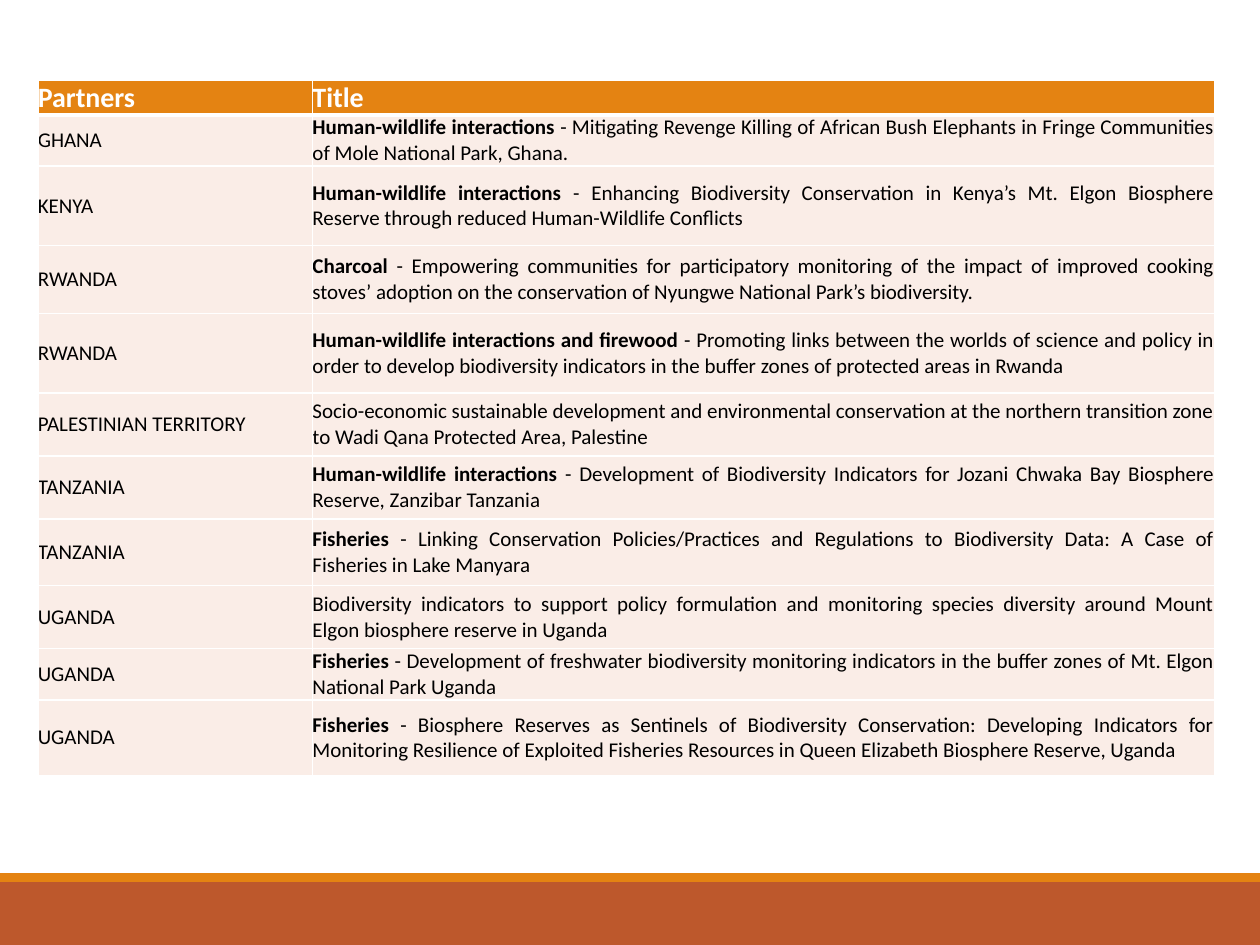
from lxml.etree import SubElement
from pptx import Presentation
from pptx.dml.color import RGBColor
from pptx.enum.shapes import MSO_SHAPE
from pptx.enum.text import MSO_ANCHOR, PP_ALIGN
from pptx.oxml.ns import qn
from pptx.util import Inches, Pt

COLORS = {
    "rust": "BD582C",
    "orange": "E48312",
    "cream": "FAEDE7",
    "white": "FFFFFF",
    "black": "000000",
}

HEADINGS = ("Partners", "Title")
WILDLIFE = "Human-wildlife interactions"

# Partner, bold topic, project title, row height
PROJECTS = [
    ("GHANA", WILDLIFE, "Mitigating Revenge Killing of African Bush Elephants in Fringe "
     "Communities of Mole National Park, Ghana.", 0.36),
    ("KENYA", WILDLIFE, "Enhancing Biodiversity Conservation in Kenya’s Mt. Elgon Biosphere "
     "Reserve through reduced Human-Wildlife Conflicts", 0.63),
    ("RWANDA", "Charcoal", "Empowering communities for participatory monitoring of the impact of "
     "improved cooking stoves’ adoption on the conservation of Nyungwe National Park’s "
     "biodiversity.", 0.54),
    ("RWANDA", WILDLIFE + " and firewood", "Promoting links between the worlds of science and "
     "policy in order to develop biodiversity indicators in the buffer zones of protected areas "
     "in Rwanda", 0.63),
    ("PALESTINIAN TERRITORY", "", "Socio-economic sustainable development and environmental "
     "conservation at the northern transition zone to Wadi Qana Protected Area, Palestine", 0.5),
    ("TANZANIA", WILDLIFE, "Development of Biodiversity Indicators for Jozani Chwaka Bay "
     "Biosphere Reserve, Zanzibar Tanzania", 0.5),
    ("TANZANIA", "Fisheries", "Linking Conservation Policies/Practices and Regulations to "
     "Biodiversity Data: A Case of Fisheries in Lake Manyara", 0.53),
    ("UGANDA", "", "Biodiversity indicators to support policy formulation and monitoring species "
     "diversity around Mount Elgon biosphere reserve in Uganda", 0.5),
    ("UGANDA", "Fisheries", "Development of freshwater biodiversity monitoring indicators in the "
     "buffer zones of Mt. Elgon National Park Uganda", 0.38),
    ("UGANDA", "Fisheries", "Biosphere Reserves as Sentinels of Biodiversity Conservation: "
     "Developing Indicators for Monitoring Resilience of Exploited Fisheries Resources in Queen "
     "Elizabeth Biosphere Reserve, Uganda", 0.6),
]

HEADING_HEIGHT = 0.13
COLUMN_WIDTHS = (2.18, 7.16)
TABLE_LEFT, TABLE_TOP = 0.3, 0.64
SLIDE_WIDTH, SLIDE_HEIGHT = 10, 7.5

# Top, height, colour
FOOTER_BANDS = [(7, 0.5, "rust"), (6.93, 0.07, "orange")]


def color(name):
    return RGBColor.from_string(COLORS[name])


def add_footer_band(slide, top, height, fill):
    band = slide.shapes.add_shape(MSO_SHAPE.RECTANGLE, 0, Inches(top),
                                  Inches(SLIDE_WIDTH), Inches(height))
    band.shadow.inherit = False
    band.fill.solid()
    band.fill.fore_color.rgb = color(fill)
    band.line.fill.background()


def set_borders(cell, top=1, bottom=1):
    """Draw white borders, widths in points; call before filling the cell."""
    properties = cell._tc.get_or_add_tcPr()
    for side, width in (("L", 1), ("R", 1), ("T", top), ("B", bottom)):
        border = SubElement(properties, qn(f"a:ln{side}"), w=str(Pt(width)))
        fill = SubElement(border, qn("a:solidFill"))
        SubElement(fill, qn("a:srgbClr"), val=COLORS["white"])


def write_cell(cell, runs, size, text_color, fill):
    """Fill a cell with runs given as (text, bold)."""
    cell.margin_left = cell.margin_right = cell.margin_top = cell.margin_bottom = 0
    cell.vertical_anchor = MSO_ANCHOR.MIDDLE
    cell.fill.solid()
    cell.fill.fore_color.rgb = color(fill)
    paragraph = cell.text_frame.paragraphs[0]
    paragraph.alignment = PP_ALIGN.JUSTIFY
    for text, bold in runs:
        run = paragraph.add_run()
        run.text = text
        run.font.name = "Calibri"
        run.font.size = Pt(size)
        run.font.bold = bold
        run.font.color.rgb = color(text_color)


def add_project_table(slide):
    heights = [HEADING_HEIGHT] + [height for *_, height in PROJECTS]
    table = slide.shapes.add_table(
        len(heights), len(COLUMN_WIDTHS), Inches(TABLE_LEFT), Inches(TABLE_TOP),
        Inches(sum(COLUMN_WIDTHS)), Inches(sum(heights))).table
    for column, width in zip(table.columns, COLUMN_WIDTHS):
        column.width = Inches(width)
    for row, height in zip(table.rows, heights):
        row.height = Inches(height)

    for column, heading in enumerate(HEADINGS):
        cell = table.cell(0, column)
        set_borders(cell, bottom=3)
        write_cell(cell, [(heading, True)], 16, "white", "orange")

    for row, (partner, topic, title, _) in enumerate(PROJECTS, start=1):
        title_runs = [(topic, True), (" - " + title, False)] if topic else [(title, False)]
        for column, runs in enumerate(([(partner, False)], title_runs)):
            cell = table.cell(row, column)
            set_borders(cell, top=3 if row == 1 else 1)
            write_cell(cell, runs, 12, "black", "cream")


def main():
    presentation = Presentation()
    presentation.slide_width = Inches(SLIDE_WIDTH)
    presentation.slide_height = Inches(SLIDE_HEIGHT)
    slide = presentation.slides.add_slide(presentation.slide_layouts[6])
    for band in FOOTER_BANDS:
        add_footer_band(slide, *band)
    add_project_table(slide)
    presentation.save("out.pptx")


if __name__ == "__main__":
    main()
